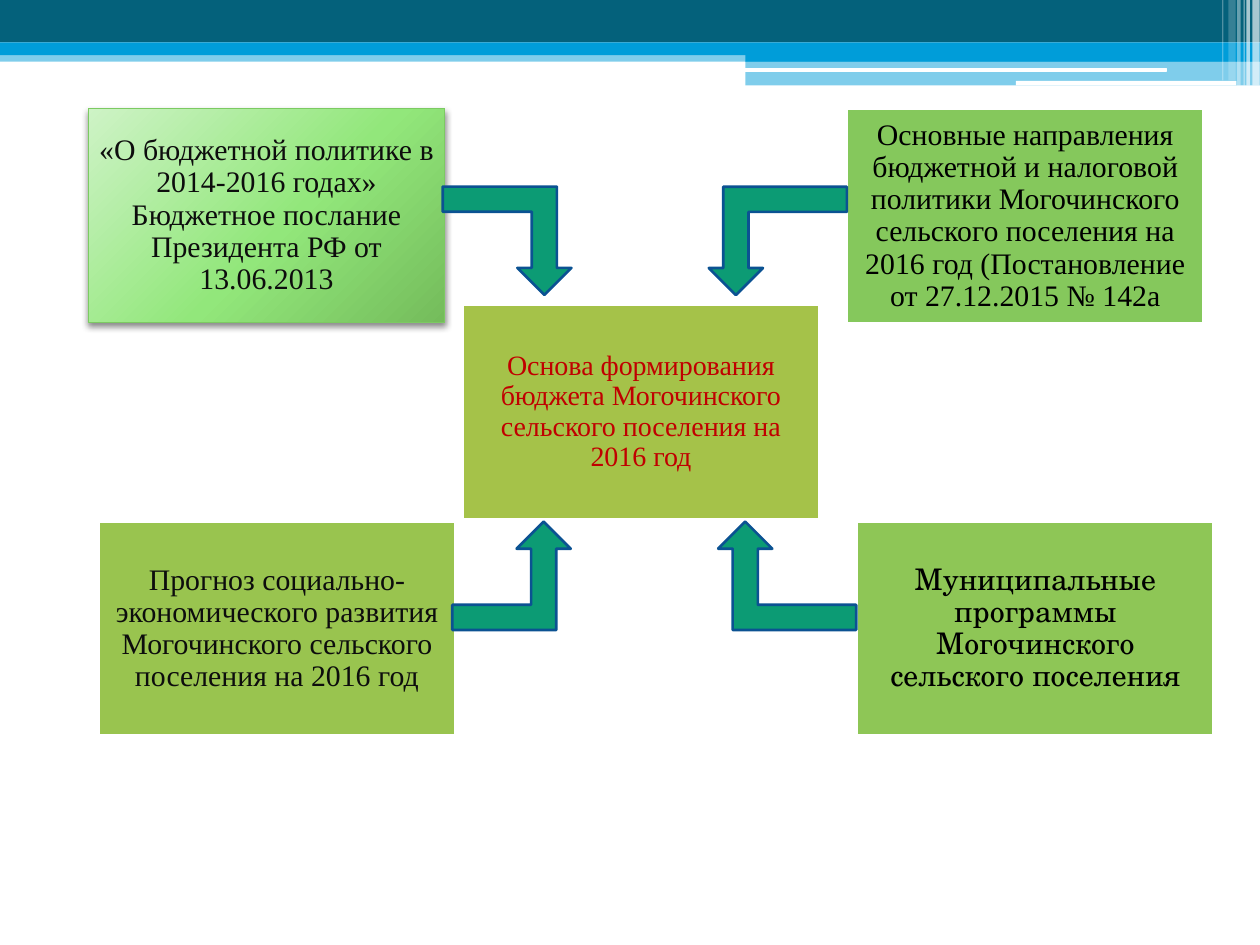
from lxml import etree
from pptx import Presentation
from pptx.dml.color import RGBColor
from pptx.enum.shapes import MSO_SHAPE
from pptx.enum.text import MSO_ANCHOR, PP_ALIGN
from pptx.oxml import parse_xml
from pptx.oxml.ns import nsdecls, qn
from pptx.util import Pt

RECT = MSO_SHAPE.RECTANGLE
ROUND = MSO_SHAPE.ROUNDED_RECTANGLE
BENT_ARROW = MSO_SHAPE.BENT_UP_ARROW
MIDDLE = MSO_ANCHOR.MIDDLE
CENTER = PP_ALIGN.CENTER

SERIF = "Times New Roman"
SCHOOL = "TeX Gyre Schola"
NAVY, SKY, WHITE = "04617B", "009DD9", "FFFFFF"
BOX_W, BOX_H = 203.8, 122.4
ARROW_H = 61.9
UPPER_Y, LOWER_Y = 61.9, 298.1


def rgb(value):
    return RGBColor.from_string(value)


class Board:
    def __init__(self, slide):
        self.slide = slide
        self.font = SERIF
        self.text_size = 17
        self.margins = dict.fromkeys(
            ("margin_left", "margin_top", "margin_right", "margin_bottom"), Pt(5))

    def block(self, kind, x, y, w, h, fill, opacity=100, line=None, line_width=1.5):
        shape = self.slide.shapes.add_shape(kind, Pt(x), Pt(y), Pt(w), Pt(h))
        shape.shadow.inherit = False
        shape.fill.solid()
        shape.fill.fore_color.rgb = rgb(fill)
        if opacity < 100:
            color = shape._element.spPr.find(qn("a:solidFill"))[0]
            etree.SubElement(color, qn("a:alpha"), val=str(opacity * 1000))
        if line:
            shape.line.color.rgb = rgb(line)
            shape.line.width = Pt(line_width)
        else:
            shape.line.fill.background()
        return shape

    def box(self, x, y, text, fill, color, font=None, size=None, line=WHITE, line_width=1.5):
        shape = self.block(RECT, x, y, BOX_W, BOX_H, fill, line=line, line_width=line_width)
        frame = shape.text_frame
        frame.text = text
        paragraph = frame.paragraphs[0]
        run_font = paragraph.runs[0].font
        run_font.color.rgb = rgb(color)
        formats = (
            (frame, {"word_wrap": True, "vertical_anchor": MIDDLE, **self.margins}),
            (paragraph, {"alignment": CENTER, "line_spacing": 0.9}),
            (run_font, {"name": font or self.font, "size": Pt(size or self.text_size)}),
        )
        for target, values in formats:
            for name, value in values.items():
                setattr(target, name, value)
        return shape

    def arrow(self, x, y, w, rotation=0, flip=None):
        shape = self.block(BENT_ARROW, x, y, w, ARROW_H, "0C9B74", line="0B5292")
        shape.adjustments[0] = 0.232
        shape.rotation = rotation
        if flip:
            shape._element.spPr.xfrm.set(flip, "1")

    def glow(self, shape, stops):
        """Give a shape a gradient spreading from beyond its top left, and a soft shadow."""
        marks = "".join(
            f'<a:gs pos="{pos * 1000}"><a:srgbClr val="{color}"/></a:gs>' for pos, color in stops)
        gradient = parse_xml(
            f'<a:gradFill {nsdecls("a")} rotWithShape="1"><a:gsLst>{marks}</a:gsLst>'
            '<a:path path="circle"><a:fillToRect l="-40000" t="-90000" r="140000" b="190000"/>'
            '</a:path></a:gradFill>')
        properties = shape._element.spPr
        properties.replace(properties.find(qn("a:solidFill")), gradient)
        properties.find(qn("a:effectLst")).append(parse_xml(
            f'<a:outerShdw {nsdecls("a")} blurRad="{Pt(4)}" dist="{Pt(2)}" dir="5400000" '
            'rotWithShape="0"><a:srgbClr val="000000"><a:alpha val="45000"/></a:srgbClr>'
            '</a:outerShdw>'))


def draw_header(board):
    bands = (
        (0, 28.8, 720, 6.5, SKY, 50),
        (0, 0, 720, 24.3, NAVY, 100),
        (0, 24.3, 720, 7.2, SKY, 100),
        (426, 28, 294, 7.2, SKY, 100),
        (426, 34.8, 294, 14, SKY, 50),
    )
    for band in bands:
        board.block(RECT, *band)
    for x, y, w, h in ((425.6, 38.9, 241.2, 2.2), (580.5, 46.2, 126, 2.6)):
        board.block(ROUND, x, y, w, h, WHITE)
    stripes = (
        (715.6, 4.2, 49, 65),
        (712.2, 2, 49, 65),
        (710.6, 0.7, 49, 60),
        (707, 2, 49, 40),
        (702, 4.2, 46, 20),
        (698.4, 0.7, 46, 30),
    )
    for x, w, h, opacity in stripes:
        board.block(RECT, x, 0, w, h, WHITE, opacity)


def draw_budget_basis(board):
    address = board.box(
        50.4, UPPER_Y,
        "«О бюджетной политике в 2014-2016 годах» Бюджетное послание Президента РФ "
        "от 13.06.2013", "92E77B", "0D0D0D", line="7CCA62", line_width=0.75)
    board.glow(address, ((0, "CEF3C6"), (55, "92E77B"), (100, "74BC5B")))
    board.box(
        484, UPPER_Y + 0.5,
        "Основные направления бюджетной и налоговой политики Могочинского сельского "
        "поселения на 2016 год (Постановление от 27.12.2015 № 142а", "85C85C", "000000")
    board.box(489.8, LOWER_Y, "Муниципальные программы Могочинского сельского поселения",
              "8EC656", "000000", font=SCHOOL)
    board.box(
        56.4, LOWER_Y,
        "Прогноз социально-экономического развития Могочинского сельского поселения "
        "на 2016 год", "99C44F", "0D0D0D")
    board.box(264.4, 174.2,
              "Основа формирования бюджета Могочинского сельского поселения на 2016 год",
              "A5C249", "C00000", size=16)
    board.arrow(258.5, LOWER_Y, 67.7)
    board.arrow(410.4, LOWER_Y, 78.9, flip="flipH")
    board.arrow(253, 106.7, 73.6, flip="flipV")
    board.arrow(405, 106.7, 78.9, rotation=180)


def main():
    deck = Presentation()
    deck.slide_width, deck.slide_height = Pt(720), Pt(540)
    board = Board(deck.slides.add_slide(deck.slide_layouts[6]))
    draw_header(board)
    draw_budget_basis(board)
    deck.save("out.pptx")


if __name__ == "__main__":
    main()
